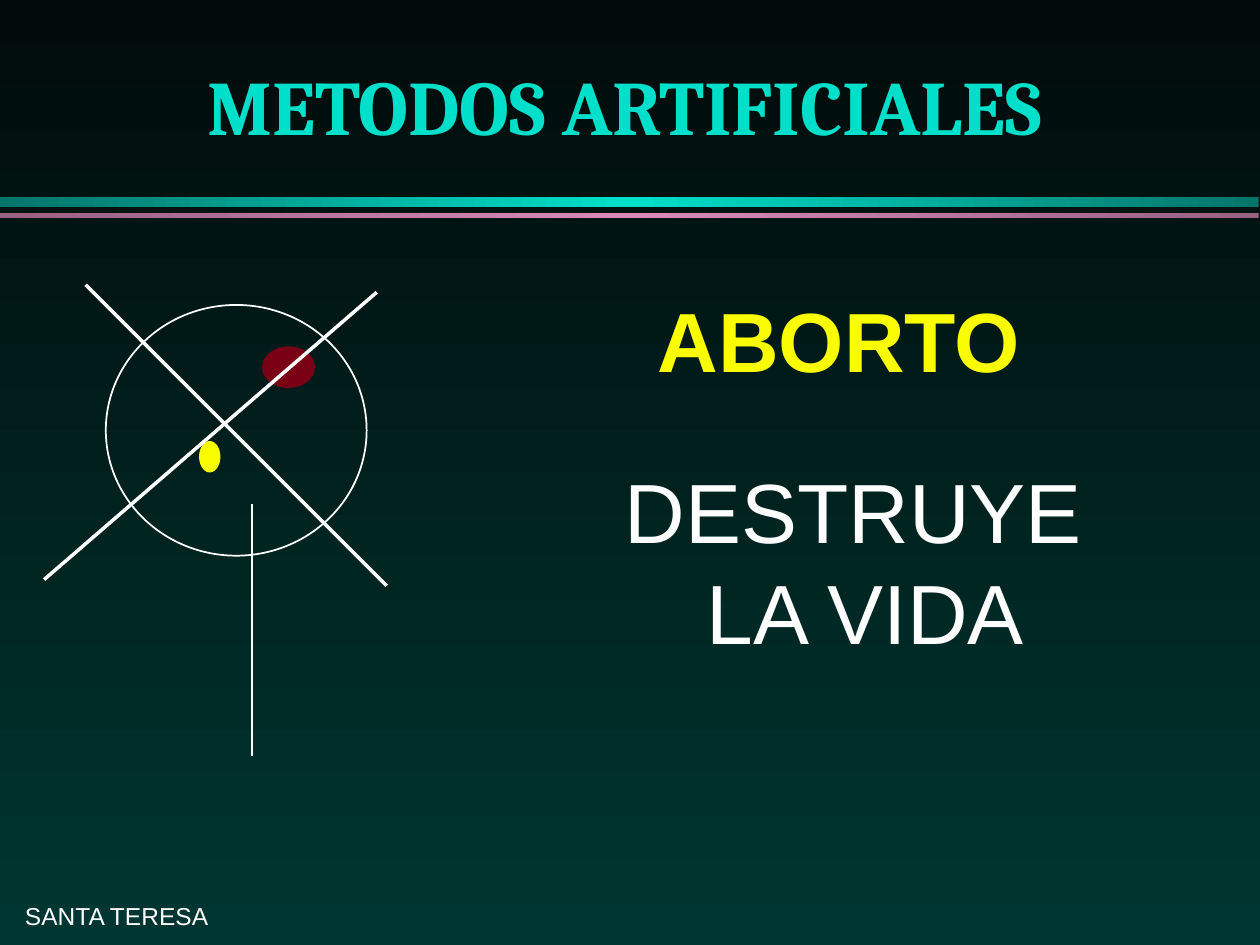
from copy import deepcopy

from lxml import etree
from pptx import Presentation
from pptx.dml.color import RGBColor
from pptx.enum.shapes import MSO_CONNECTOR, MSO_SHAPE
from pptx.enum.text import MSO_ANCHOR, PP_ALIGN
from pptx.oxml.ns import qn
from pptx.util import Inches, Pt

RECTANGLE, OVAL = MSO_SHAPE.RECTANGLE, MSO_SHAPE.OVAL
STRAIGHT = MSO_CONNECTOR.STRAIGHT
LEFT, CENTER = PP_ALIGN.LEFT, PP_ALIGN.CENTER
TOP, MIDDLE, BOTTOM = MSO_ANCHOR.TOP, MSO_ANCHOR.MIDDLE, MSO_ANCHOR.BOTTOM

WHITE = RGBColor(0xFF, 0xFF, 0xFF)
YELLOW = RGBColor(0xFA, 0xFD, 0x00)
MAROON = RGBColor(0x79, 0x00, 0x15)
TURQUOISE = RGBColor(0x00, 0xDF, 0xCA)
DARK_TURQUOISE = RGBColor(0x00, 0x75, 0x6A)
PINK = RGBColor(0xD9, 0x89, 0xB8)
DARK_PINK = RGBColor(0x98, 0x60, 0x81)
NIGHT = RGBColor(0x00, 0x0B, 0x0A)
DEEP_GREEN = RGBColor(0x00, 0x36, 0x31)

TITLE = {
    "lines": ["METODOS ARTIFICIALES"], "box": (0.67, 0, 8.58, 1.25),
    "anchor": BOTTOM, "wrap": True, "align": CENTER,
    "font": {"name": "Cambria", "size": Pt(44), "bold": True}, "color": TURQUOISE,
}
TEXTS = [
    {"lines": ["SANTA TERESA"], "box": (0.1, 7.1, 1.73, 0.33),
     "anchor": MIDDLE, "wrap": False, "align": LEFT,
     "font": {"name": "Arial", "size": Pt(14)}, "color": WHITE},
    {"lines": ["ABORTO"], "box": (5.12, 2.24, 4.13, 0.9),
     "anchor": TOP, "wrap": True, "align": LEFT,
     "font": {"name": "Arial", "size": Pt(48), "bold": True}, "color": YELLOW},
    {"lines": ["DESTRUYE ", " LA VIDA"], "box": (4.77, 3.6, 4.01, 1.7),
     "anchor": TOP, "wrap": False, "align": CENTER,
     "font": {"name": "Arial", "size": Pt(48)}, "color": WHITE},
]
BANDS = [
    ((0, 1.56, 9.99, 0.08), [DARK_TURQUOISE, TURQUOISE, DARK_TURQUOISE]),
    ((0, 1.69, 9.99, 0.04), [DARK_PINK, PINK, DARK_PINK]),
]
OVUM = (0.84, 2.42, 2.07, 1.99)
NUCLEUS = (2.08, 2.75, 0.42, 0.33)
SPERM_HEAD = (1.58, 3.5, 0.17, 0.25)
SPERM_TAIL = [
    (1.67, 3.75), (1.66, 3.81), (1.62, 3.9), (1.6, 3.95), (1.58, 4.02),
    (1.58, 4.12), (1.62, 4.19), (1.69, 4.24), (1.73, 4.3), (1.73, 4.44),
    (1.67, 4.5), (1.58, 4.59), (1.58, 4.74), (1.6, 4.81), (1.66, 4.88),
    (1.71, 5.03), (1.77, 5.08), (1.8, 5.23), (1.8, 5.56), (1.77, 5.63),
    (1.77, 5.96), (1.73, 6.03), (1.75, 5.92),
]
CROSS = [((0.68, 2.26), (3.07, 4.65)), ((0.35, 4.6), (2.99, 2.32))]


def inches(values):
    return [Inches(value) for value in values]


def fill_gradient(fill, element, colors, angle):
    fill.gradient()
    fill.gradient_angle = angle
    stop_list = element.xpath(".//a:gsLst")[0]
    while len(stop_list) < len(colors):
        stop_list.append(deepcopy(stop_list[0]))
    for index, (stop, color) in enumerate(zip(fill.gradient_stops, colors)):
        stop.color.rgb = color
        stop.position = index / (len(colors) - 1)


def set_line(shape, width):
    shape.line.color.rgb = WHITE
    shape.line.width = Pt(width)


def add_plain_shape(slide, preset, box):
    shape = slide.shapes.add_shape(preset, *inches(box))
    shape.shadow.inherit = False
    shape.fill.background()
    shape.line.fill.background()
    return shape


def write_text(shape, text):
    shape.left, shape.top, shape.width, shape.height = inches(text["box"])
    frame = shape.text_frame
    frame.text = "\n".join(text["lines"])
    frame.word_wrap = text["wrap"]
    frame.vertical_anchor = text["anchor"]
    for paragraph in frame.paragraphs:
        paragraph.alignment = text["align"]
        font = paragraph.runs[0].font
        for name, value in text["font"].items():
            setattr(font, name, value)
        font.color.rgb = text["color"]


def draw_cell(slide):
    set_line(add_plain_shape(slide, OVAL, OVUM), 1)
    for box, color in ((NUCLEUS, MAROON), (SPERM_HEAD, YELLOW)):
        shape = add_plain_shape(slide, OVAL, box)
        shape.fill.solid()
        shape.fill.fore_color.rgb = color

    builder = slide.shapes.build_freeform(*SPERM_TAIL[0], scale=Inches(1))
    builder.add_line_segments(SPERM_TAIL[1:], close=False)
    tail = builder.convert_to_shape()
    tail.shadow.inherit = False
    tail.fill.background()
    set_line(tail, 1)

    for start, end in CROSS:
        connector = slide.shapes.add_connector(STRAIGHT, *inches(start + end))
        set_line(connector, 2)
        etree.SubElement(connector._element.spPr, qn("a:effectLst"))


def main():
    presentation = Presentation()
    presentation.slide_width, presentation.slide_height = Inches(10), Inches(7.5)
    slide = presentation.slides.add_slide(presentation.slide_layouts[5])
    fill_gradient(slide.background.fill, slide._element, [NIGHT, DEEP_GREEN], 270)

    for box, colors in BANDS:
        band = add_plain_shape(slide, RECTANGLE, box)
        fill_gradient(band.fill, band._element, colors, 0)

    write_text(slide.shapes.title, TITLE)
    for text in TEXTS:
        write_text(slide.shapes.add_textbox(*inches(text["box"])), text)
    draw_cell(slide)
    presentation.save("out.pptx")


if __name__ == "__main__":
    main()
